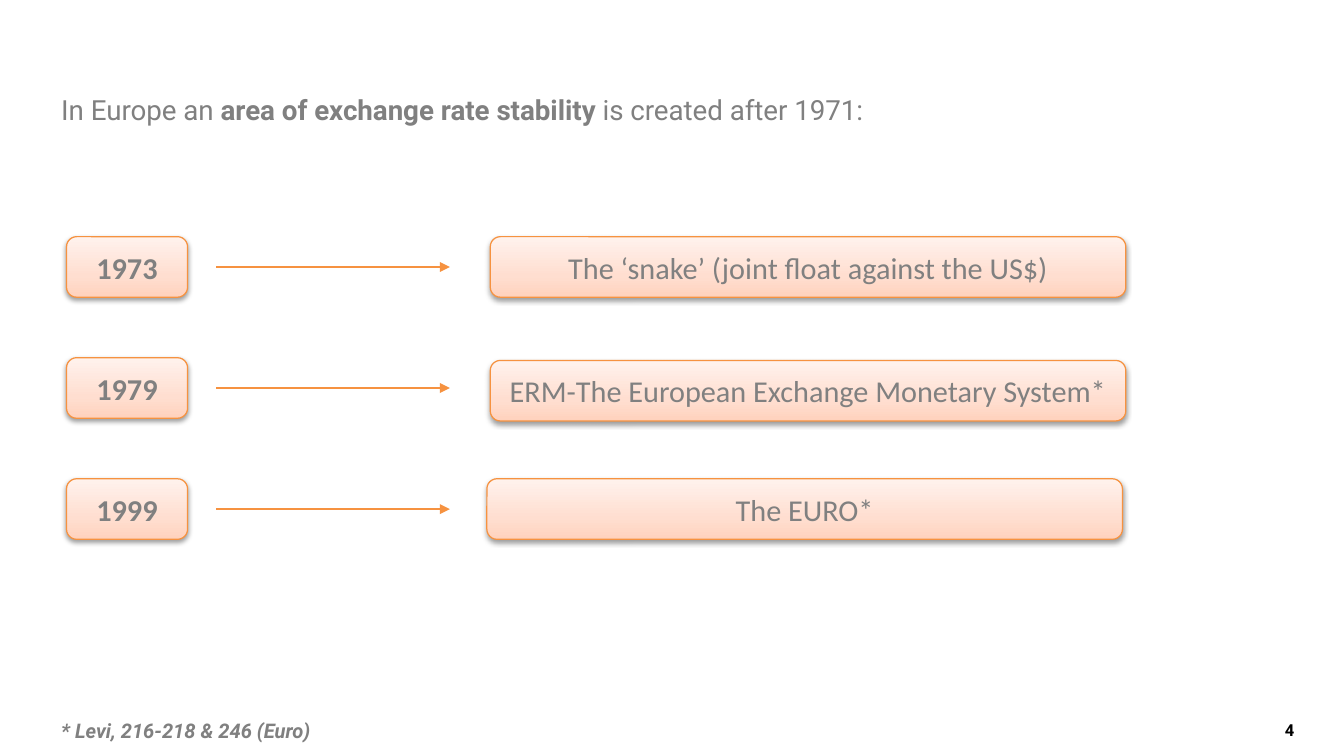
import pptx
import pptx.util
import pptx.dml.color
import pptx.enum.shapes
import pptx.enum.text
import pptx.oxml
import pptx.oxml.ns

Pt = pptx.util.Pt
ALIGN = pptx.enum.text.PP_ALIGN
GRAY, ORANGE, BLACK = "808080", "F69240", "000000"
STOPS = [(0, "FFD2BD"), (35, "FFDED0"), (100, "FFF2ED")]
NS = pptx.oxml.ns.nsdecls("a")
ROW_PITCH, ROW_HEIGHT = 72, 36
EVENTS = [
    ("1973", "The ‘snake’ (joint float against the US$)", 252, 0),
    ("1979", "ERM-The European Exchange Monetary System*", 252, 1.6),
    ("1999", "The EURO*", 250, 0),
]


def rgb(value):
    return pptx.dml.color.RGBColor.from_string(value)


def add_runs(p, runs, color, **formats):
    for text, extra in runs:
        r = p.add_run()
        r.text = text
        for name, value in {**formats, **extra}.items():
            setattr(r.font, name, value)
        r.font.color.rgb = rgb(color)


def add_label(slide, box, runs, size, color=GRAY, align=ALIGN.LEFT):
    tf = slide.shapes.add_textbox(*map(Pt, box)).text_frame
    tf.word_wrap = True
    p = tf.paragraphs[0]
    p.alignment = align
    add_runs(p, runs, color, name="Roboto", size=Pt(size))


def add_card(slide, box, text, bold=False):
    sp = slide.shapes.add_shape(
        pptx.enum.shapes.MSO_SHAPE.ROUNDED_RECTANGLE, *map(Pt, box))
    sp.fill.gradient()
    stops = "".join(
        f'<a:gs pos="{pos * 1000}"><a:srgbClr val="{color}"/></a:gs>'
        for pos, color in STOPS)
    grad = sp._element.spPr.find(pptx.oxml.ns.qn("a:gradFill"))
    for child in list(grad):
        grad.remove(child)
    grad.append(pptx.oxml.parse_xml(f"<a:gsLst {NS}>{stops}</a:gsLst>"))
    grad.append(pptx.oxml.parse_xml(f'<a:lin {NS} ang="16200000" scaled="0"/>'))
    sp.line.color.rgb = rgb(ORANGE)
    sp.line.width = Pt(0.75)
    sp.shadow.inherit = False
    effects = sp._element.spPr.find(pptx.oxml.ns.qn("a:effectLst"))
    effects.append(pptx.oxml.parse_xml(
        f'<a:outerShdw {NS} blurRad="{Pt(3.1)}" dist="{Pt(1.6)}" dir="5400000" '
        f'rotWithShape="0"><a:srgbClr val="{BLACK}"><a:alpha val="38000"/>'
        '</a:srgbClr></a:outerShdw>'))
    tf = sp.text_frame
    tf.word_wrap = True
    tf.vertical_anchor = pptx.enum.text.MSO_ANCHOR.MIDDLE
    p = tf.paragraphs[0]
    p.alignment = ALIGN.CENTER
    add_runs(p, [(text, {})], GRAY, name="Calibri", size=Pt(18), bold=bold)


def add_arrow(slide, x1, x2, y):
    line = slide.shapes.add_connector(
        pptx.enum.shapes.MSO_CONNECTOR.STRAIGHT, Pt(x1), Pt(y), Pt(x2), Pt(y))
    line.line.color.rgb = rgb(ORANGE)
    line.line.width = Pt(0.75)
    line.line._get_or_add_ln().append(
        pptx.oxml.parse_xml(f'<a:tailEnd {NS} type="triangle"/>'))
    line._element.spPr.append(pptx.oxml.parse_xml(f"<a:effectLst {NS}/>"))


def add_timeline(slide, left, top):
    for i, (year, event, event_dx, event_dy) in enumerate(EVENTS):
        y = top + i * ROW_PITCH
        add_card(slide, (left, y, 72, ROW_HEIGHT), year, bold=True)
        add_arrow(slide, left + 89, left + 228, y + ROW_HEIGHT / 2)
        add_card(slide, (left + event_dx, y + event_dy, 378, ROW_HEIGHT), event)


def build_slide(prs):
    slide = prs.slides.add_slide(prs.slide_layouts[6])
    add_label(slide, (29.3, 51.8, 740.9, 27.4), [
        ("In Europe an ", {}),
        ("area of exchange rate stability", {"bold": True}),
        (" is created after 1971:", {}),
    ], 16.5)
    add_timeline(slide, 39.6, 140.8)
    bold = {"bold": True}
    add_label(slide, (29.3, 423.7, 176.4, 21.6),
              [("* Levi, 216-218 & 246 (Euro)", {**bold, "italic": True})], 12)
    add_label(slide, (753, 424.5, 28.1, 13.7), [("4", bold)], 9.8,
              BLACK, ALIGN.CENTER)


def main():
    prs = pptx.Presentation()
    prs.slide_width, prs.slide_height = Pt(799.37), Pt(449.65)
    build_slide(prs)
    prs.save("out.pptx")


if __name__ == "__main__":
    main()
